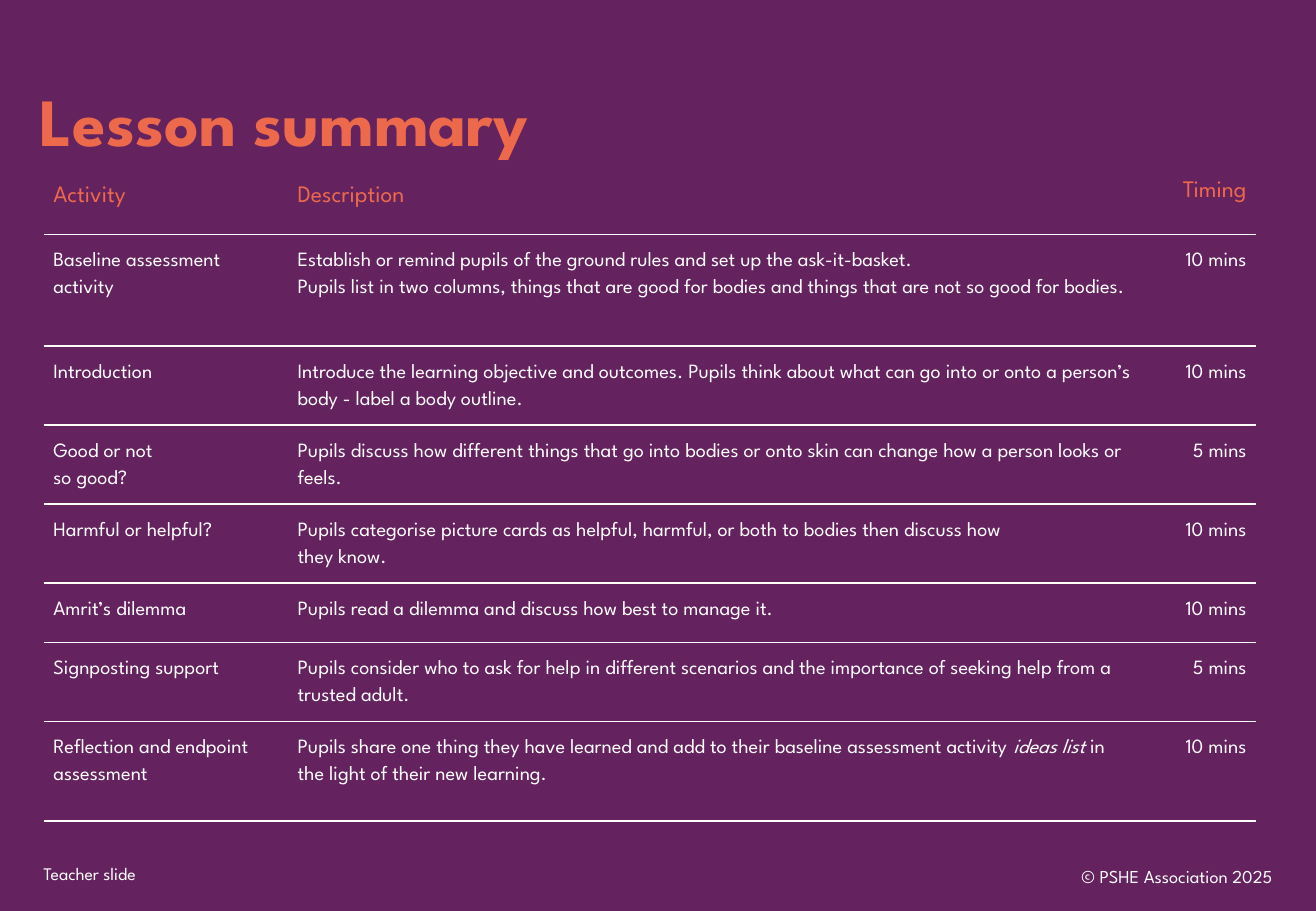
from dataclasses import dataclass

from lxml.etree import SubElement
from pptx import Presentation
from pptx.dml.color import RGBColor
from pptx.enum.text import MSO_ANCHOR, PP_ALIGN
from pptx.oxml import parse_xml
from pptx.oxml.ns import nsdecls, qn
from pptx.slide import Slide
from pptx.table import Table, _Cell
from pptx.text.text import _Paragraph
from pptx.util import Inches, Length, Pt

PURPLE = RGBColor(0x64, 0x23, 0x5E)
ORANGE = RGBColor(0xED, 0x69, 0x4B)
WHITE = RGBColor(0xFF, 0xFF, 0xFF)
FONT = "League Spartan"
NO_GRID_STYLE = "{2D5ABB26-0587-4C30-8999-92F81FD0307C}"

SLIDE_WIDTH = Inches(10.83)
SLIDE_HEIGHT = Inches(7.5)

# Table grid, in percent of the slide's width and height
TABLE_LEFT, TABLE_TOP = 3.32, 18.8
COLUMNS = (17.82, 65.84, 8.49)
ROWS = (6.93, 12.27, 8.67, 8.67, 8.67, 6.53, 8.67, 10.93)
INSET_X, INSET_Y = 0.74, 1.07


def across(percent: float) -> Length:
    return Length(round(SLIDE_WIDTH * percent / 100))


def down(percent: float) -> Length:
    return Length(round(SLIDE_HEIGHT * percent / 100))


@dataclass(frozen=True)
class Span:
    text: str
    italic: bool = False


@dataclass(frozen=True)
class Activity:
    name: str
    description: tuple[Span, ...]
    minutes: int


@dataclass(frozen=True)
class Label:
    text: str
    left: float
    top: float
    width: float
    height: float
    size: float
    color: RGBColor = WHITE
    bold: bool = False
    align: PP_ALIGN = PP_ALIGN.LEFT
    anchor: MSO_ANCHOR = MSO_ANCHOR.MIDDLE
    line_spacing: float = 1.0


LABELS = (
    Label("Lesson summary", 2.12, 8.67, 75.72, 10.13, 40, ORANGE, bold=True, line_spacing=0.9),
    Label("Teacher slide", 2.4, 94, 62.6, 3.87, 10.5, anchor=MSO_ANCHOR.TOP),
    Label("© PSHE Association 2025", 75.07, 93.47, 22.53, 5.33, 10.8, align=PP_ALIGN.RIGHT),
)

HEADINGS = ("Activity", "Description", "Timing")

ACTIVITIES = (
    Activity("Baseline assessment activity", (
        Span("Establish or remind pupils of the ground rules and set up the ask-it-basket.\n"
             "Pupils list in two columns, things that are good for bodies "
             "and things that are not so good for bodies."),), 10),
    Activity("Introduction", (
        Span("Introduce the learning objective and outcomes. Pupils think about what can go "
             "into or onto a person’s body - label a body outline."),), 10),
    Activity("Good or not\nso good?", (
        Span("Pupils discuss how different things that go into bodies or onto skin "
             "can change how a person looks or feels."),), 5),
    Activity("Harmful or helpful?", (
        Span("Pupils categorise picture cards as helpful, harmful, or both to bodies "
             "then discuss how\nthey know."),), 10),
    Activity("Amrit’s dilemma", (
        Span("Pupils read a dilemma and discuss how best to manage it."),), 10),
    Activity("Signposting support", (
        Span("Pupils consider who to ask for help in different scenarios "
             "and the importance of seeking help from a trusted adult."),), 5),
    Activity("Reflection and endpoint assessment", (
        Span("Pupils share one thing they have learned and add to their "
             "baseline assessment activity "),
        Span("ideas list", italic=True),
        Span(" in the light of their new learning.")), 10),
)


def add_span(paragraph: _Paragraph, span: Span, size: float, color: RGBColor,
             bold: bool = False) -> None:
    for index, line in enumerate(span.text.split("\n")):
        if index:
            paragraph.add_line_break()
        run = paragraph.add_run()
        run.text = line
        run.font.name = FONT
        run.font.size = Pt(size)
        run.font.color.rgb = color
        run.font.bold = bold
        run.font.italic = span.italic


def add_label(slide: Slide, label: Label) -> None:
    box = slide.shapes.add_textbox(across(label.left), down(label.top),
                                   across(label.width), down(label.height))
    frame = box.text_frame
    frame.word_wrap = True
    frame.vertical_anchor = label.anchor
    paragraph = frame.paragraphs[0]
    paragraph.alignment = label.align
    paragraph.line_spacing = label.line_spacing
    add_span(paragraph, Span(label.text), label.size, label.color, label.bold)


def rule_below(cell: _Cell) -> None:
    cell.fill.background()
    line = parse_xml(f'<a:lnB {nsdecls("a")} w="{Pt(1)}"/>')
    fill = SubElement(line, qn("a:solidFill"))
    SubElement(fill, qn("a:srgbClr"), val=str(WHITE))
    cell._tc.get_or_add_tcPr().insert(0, line)


def fill_row(table: Table, row: int, texts: tuple[tuple[Span, ...], ...],
             size: float, color: RGBColor) -> None:
    for column, spans in enumerate(texts):
        is_timing = column == len(COLUMNS) - 1
        cell = table.cell(row, column)
        cell.margin_left = across(INSET_X * 2 if column == 1 else INSET_X)
        cell.margin_right = across(INSET_X)
        cell.margin_top = cell.margin_bottom = down(INSET_Y)
        rule_below(cell)
        paragraph = cell.text_frame.paragraphs[0]
        paragraph.alignment = PP_ALIGN.RIGHT if is_timing else PP_ALIGN.LEFT
        if row or not is_timing:
            paragraph.line_spacing = Pt(16)
        for span in spans:
            add_span(paragraph, span, size, color)


def add_lesson_plan(slide: Slide) -> None:
    frame = slide.shapes.add_table(len(ROWS), len(COLUMNS), across(TABLE_LEFT), down(TABLE_TOP),
                                   across(sum(COLUMNS)), down(sum(ROWS)))
    table = frame.table
    table.horz_banding = False
    table._tbl.tblPr.find(qn("a:tableStyleId")).text = NO_GRID_STYLE
    for column, width in zip(table.columns, COLUMNS):
        column.width = across(width)
    for row, height in zip(table.rows, ROWS):
        row.height = down(height)

    fill_row(table, 0, tuple((Span(heading),) for heading in HEADINGS), 14, ORANGE)
    for number, activity in enumerate(ACTIVITIES, start=1):
        texts = ((Span(activity.name),), activity.description,
                 (Span(f"{activity.minutes} mins"),))
        fill_row(table, number, texts, 12, WHITE)


def main() -> None:
    presentation = Presentation()
    presentation.slide_width = SLIDE_WIDTH
    presentation.slide_height = SLIDE_HEIGHT
    slide = presentation.slides.add_slide(presentation.slide_layouts[6])

    # Background
    slide.background.fill.solid()
    slide.background.fill.fore_color.rgb = PURPLE

    # Title and footer
    for label in LABELS:
        add_label(slide, label)

    # Activities with their timings
    add_lesson_plan(slide)

    presentation.save("out.pptx")


if __name__ == "__main__":
    main()
